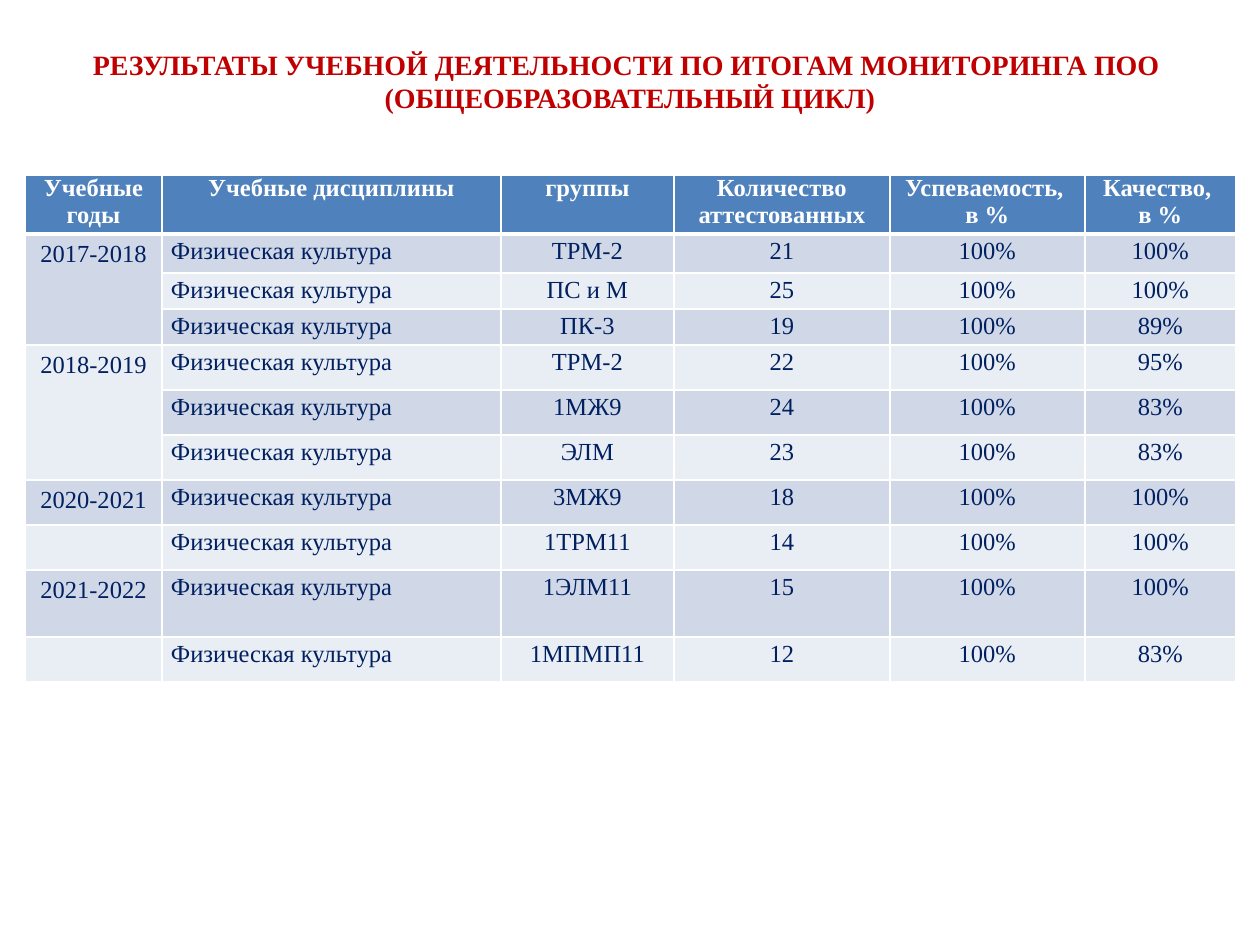
from copy import deepcopy

from lxml import etree
from pptx import Presentation
from pptx.dml.color import RGBColor
from pptx.enum.text import MSO_ANCHOR, MSO_AUTO_SIZE, PP_ALIGN
from pptx.oxml.ns import qn
from pptx.util import Pt

PX = 914400 // 126
LEFT, CENTER = PP_ALIGN.LEFT, PP_ALIGN.CENTER
TITLE_ONLY = 5

COLORS = {
    "title": "C00000", "header": "4F81BD", "text": "002060",
    "white": "FFFFFF", "dark_band": "D0D8E8", "light_band": "E9EDF4",
}
FONT = "Times New Roman"
TITLE = ("РЕЗУЛЬТАТЫ УЧЕБНОЙ ДЕЯТЕЛЬНОСТИ ПО ИТОГАМ МОНИТОРИНГА ПОО \v"
         "(ОБЩЕОБРАЗОВАТЕЛЬНЫЙ ЦИКЛ)")
HEADERS = ["Учебные годы", "Учебные дисциплины", "группы",
           "Количество аттестованных", "Успеваемость, \nв %", "Качество, \nв %"]
SUBJECT = "Физическая культура"
PASS_RATE = "100%"
# year, group, students assessed, quality
RESULTS = [
    ("2017-2018", "ТРМ-2", "21", "100%"),
    ("", "ПС и М", "25", "100%"),
    ("", "ПК-3", "19", "89%"),
    ("2018-2019", "ТРМ-2", "22", "95%"),
    ("", "1МЖ9", "24", "83%"),
    ("", "ЭЛМ", "23", "83%"),
    ("2020-2021", "3МЖ9", "18", "100%"),
    ("", "1ТРМ11", "14", "100%"),
    ("2021-2022", "1ЭЛМ11", "15", "100%"),
    ("", "1МПМП11", "12", "83%"),
]
MERGED_YEARS = [(1, 3), (4, 6)]  # first and last table row
COLUMN_WIDTHS = [137, 339, 173, 216, 195, 151]
ROW_HEIGHTS = [59, 39, 36, 36, 45, 45, 45, 45, 45, 67, 45]
TABLE_LEFT, TABLE_TOP = 25, 175
TITLE_BOX = {"left": 63, "top": 26, "width": 1134, "height": 110}
CELL_MARGINS = {"margin_left": 9 * PX, "margin_right": 9 * PX,
                "margin_top": 0, "margin_bottom": 0}


def format_runs(paragraph, size, color, bold):
    values = {"name": FONT, "size": Pt(size), "bold": bold}
    for run in paragraph.runs:
        for name, value in values.items():
            setattr(run.font, name, value)
        run.font.color.rgb = RGBColor.from_string(COLORS[color])


def add_border(cell, side, points):
    line = etree.SubElement(cell._tc.get_or_add_tcPr(), qn(f"a:ln{side}"), w=str(Pt(points)))
    fill = etree.SubElement(line, qn("a:solidFill"))
    etree.SubElement(fill, qn("a:srgbClr"), val=COLORS["white"])


def format_cell(cell, row, column, text):
    header, year = row == 0, row > 0 and column == 0
    if not (year and text):
        for name, value in CELL_MARGINS.items():
            setattr(cell, name, value)
    for side in "LRTB":
        under_header = (row, side) in ((0, "B"), (1, "T"))
        add_border(cell, side, 3 if under_header else 1)
    band = "header" if header else "dark_band" if row % 2 else "light_band"
    cell.fill.solid()
    cell.fill.fore_color.rgb = RGBColor.from_string(COLORS[band])
    cell.text = text
    for paragraph in cell.text_frame.paragraphs:
        paragraph.alignment = LEFT if column == 1 and not header else CENTER
        if not header and not year:
            paragraph.line_spacing = 1.15
        format_runs(paragraph, 14, "white" if header else "text", header)


def add_title(slide):
    title = slide.shapes.title
    for name, value in TITLE_BOX.items():
        setattr(title, name, value * PX)
    frame = title.text_frame
    frame.text = TITLE
    frame.word_wrap = True
    frame.auto_size = MSO_AUTO_SIZE.NONE
    frame.vertical_anchor = MSO_ANCHOR.MIDDLE
    paragraph = frame.paragraphs[0]
    paragraph.alignment = CENTER
    format_runs(paragraph, 16, "title", True)
    for line_break in paragraph._p.findall(qn("a:br")):
        line_break.append(deepcopy(paragraph.runs[0]._r.rPr))


def add_results_table(slide):
    rows = [HEADERS] + [[year, SUBJECT, group, count, PASS_RATE, quality]
                        for year, group, count, quality in RESULTS]
    table = slide.shapes.add_table(
        len(rows), len(HEADERS), TABLE_LEFT * PX, TABLE_TOP * PX,
        sum(COLUMN_WIDTHS) * PX, sum(ROW_HEIGHTS) * PX).table
    for column, width in zip(table.columns, COLUMN_WIDTHS):
        column.width = width * PX
    for row, height in zip(table.rows, ROW_HEIGHTS):
        row.height = height * PX
    for row, texts in enumerate(rows):
        for column, text in enumerate(texts):
            format_cell(table.cell(row, column), row, column, text)
    for first, last in MERGED_YEARS:
        table.cell(first, 0).merge(table.cell(last, 0))


def main():
    presentation = Presentation()
    presentation.slide_width = 1260 * PX
    presentation.slide_height = 945 * PX
    slide = presentation.slides.add_slide(presentation.slide_layouts[TITLE_ONLY])
    add_title(slide)
    add_results_table(slide)
    presentation.save("out.pptx")


if __name__ == "__main__":
    main()
